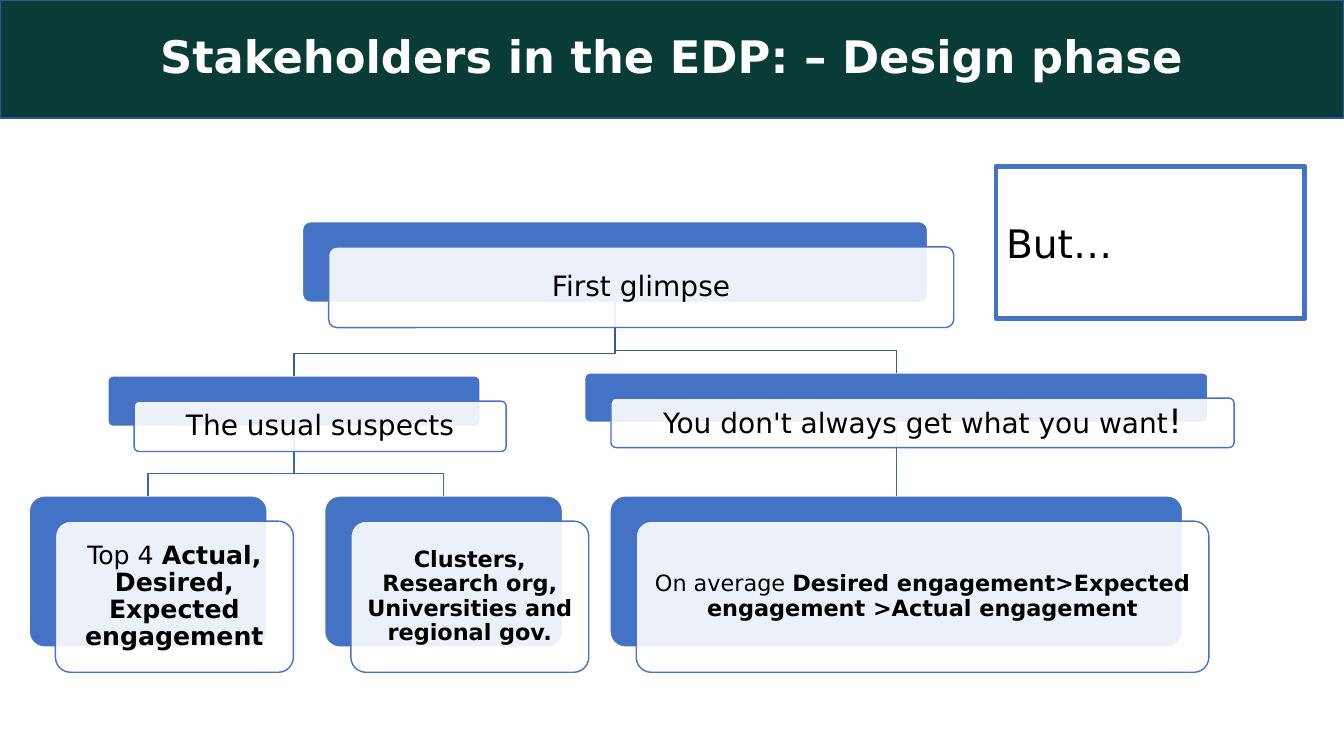
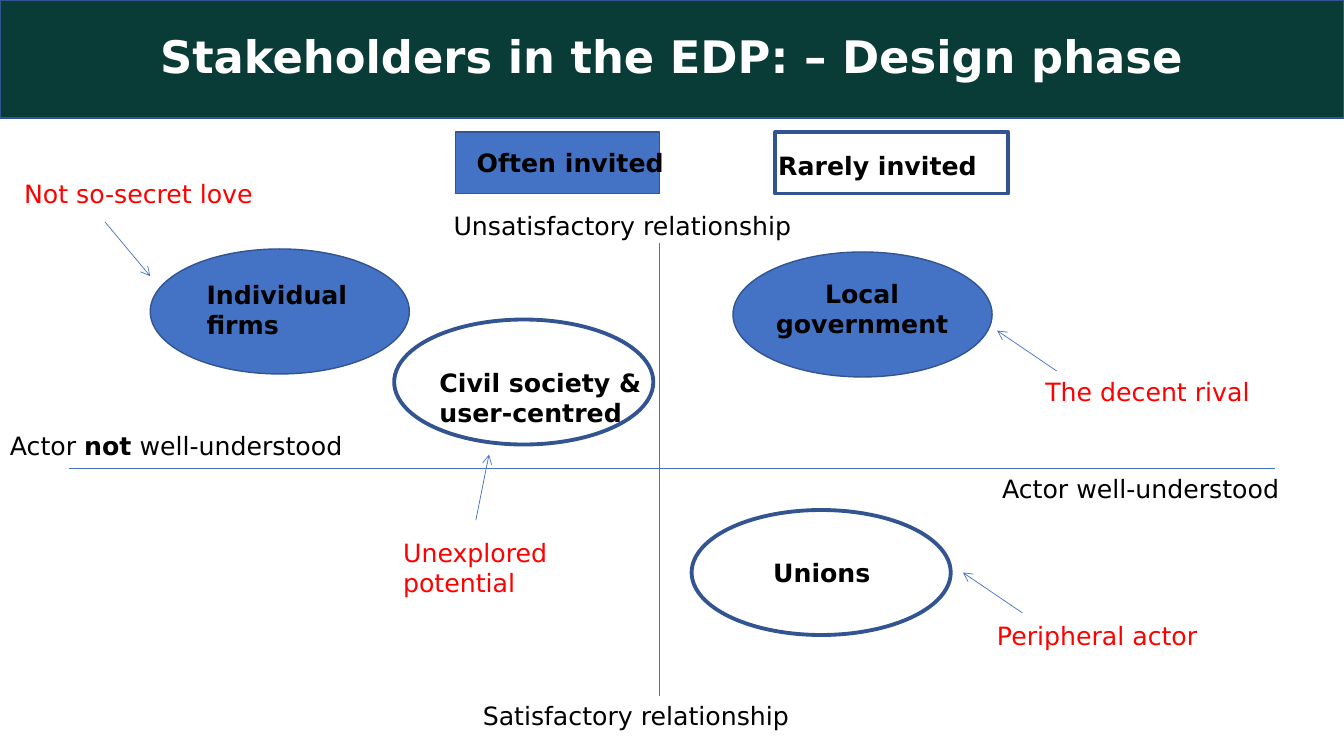
from dataclasses import dataclass
from typing import Optional, Sequence, Union

from lxml.etree import SubElement
from pptx import Presentation
from pptx.dml.color import RGBColor
from pptx.enum.shapes import MSO_CONNECTOR, MSO_SHAPE
from pptx.enum.text import MSO_ANCHOR, MSO_AUTO_SIZE, PP_ALIGN
from pptx.oxml.ns import qn
from pptx.shapes.autoshape import Shape
from pptx.shapes.connector import Connector
from pptx.slide import Slide
from pptx.text.text import TextFrame
from pptx.util import Inches, Pt

FONT = "DejaVu Sans"
GREEN, BLUE, NAVY = "093B37", "4472C4", "325491"
WHITE, BLACK, RED = "FFFFFF", "000000", "FF0000"
TITLE = "Stakeholders in the EDP: – Design phase"
SLIDE_WIDTH, SLIDE_HEIGHT = 13.33, 7.5
CARD_SHIFT_X, CARD_SHIFT_Y = 0.26, 0.25
BEND_ABOVE_CHILD = 0.22
ELLIPSE_SIZE = (2.57, 1.24)


@dataclass(frozen=True)
class Run:
    """A stretch of text with its own weight or size."""
    text: str
    bold: bool = False
    size: Optional[float] = None


Text = Union[str, Sequence[Run]]


@dataclass(frozen=True)
class Card:
    """A card of the hierarchy, hung under its parent."""
    box: tuple[float, float, float, float]
    text: Text
    size: float
    parent: Optional[int] = None
    link_color: str = "3E67B2"

    @property
    def center(self) -> float:
        """Return the horizontal middle of the back plate."""
        return self.box[0] + self.box[2] / 2


@dataclass(frozen=True)
class Actor:
    """A legend entry or an actor on the map, with its label."""
    kind: MSO_SHAPE
    box: tuple[float, float, float, float]
    often: bool
    label: str
    label_at: tuple[float, float]
    align: PP_ALIGN = PP_ALIGN.LEFT


@dataclass(frozen=True)
class AxisLabel:
    """A label at the end of an axis."""
    text: Text
    left: float
    top: float
    width: float


@dataclass(frozen=True)
class Remark:
    """A red remark with an arrow to its actor."""
    text: str
    at: tuple[float, float]
    start: tuple[float, float]
    end: tuple[float, float]


CARDS = [
    Card((3, 2.2, 6.2, 0.8), "First glimpse", 20),
    Card((1.07, 3.73, 3.69, 0.5), "The usual suspects", 20, 0, "365B9D"),
    Card((5.8, 3.7, 6.18, 0.49),
         [Run("You don't always get what you want"), Run("!", size=24)], 20, 0, "365B9D"),
    Card((0.29, 4.92, 2.36, 1.5),
         [Run("Top 4 "), Run("Actual, Desired, Expected engagement", True)], 18, 1),
    Card((3.22, 4.92, 2.36, 1.5),
         [Run("Clusters, Research org, Universities and regional gov.", True)], 16, 1),
    Card((6.05, 4.92, 5.68, 1.5),
         [Run("On average "),
          Run("Desired engagement>Expected engagement >Actual engagement", True)], 16, 2),
]

ACTORS = [
    Actor(MSO_SHAPE.RECTANGLE, (4.52, 1.31, 2.02, 0.61), True, "Often invited", (4.63, 1.41)),
    Actor(MSO_SHAPE.RECTANGLE, (7.69, 1.31, 2.31, 0.61), False, "Rarely invited", (7.62, 1.44)),
    Actor(MSO_SHAPE.OVAL, (1.49, 2.47, *ELLIPSE_SIZE), True, "Individual firms", (1.95, 2.72)),
    Actor(MSO_SHAPE.OVAL, (7.27, 2.5, *ELLIPSE_SIZE), True, "Local government", (7.44, 2.71),
          PP_ALIGN.CENTER),
    Actor(MSO_SHAPE.OVAL, (3.91, 3.17, *ELLIPSE_SIZE), False, "Civil society & user-centred",
          (4.26, 3.59)),
    Actor(MSO_SHAPE.OVAL, (6.86, 5.06, *ELLIPSE_SIZE), False, "Unions", (7.57, 5.48)),
]

AXIS_LABELS = [
    AxisLabel("Unsatisfactory relationship", 4.4, 2.04, 4.33),
    AxisLabel([Run("Actor "), Run("not", True), Run(" well-understood")], 0, 4.22, 3.56),
    AxisLabel("Actor well-understood", 9.84, 4.65, 3.3),
    AxisLabel("Satisfactory relationship", 4.69, 6.9, 4.33),
]

REMARKS = [
    Remark("The decent rival", (10.27, 3.68), (10.48, 3.68), (9.89, 3.28)),
    Remark("Unexplored potential", (3.9, 5.28), (4.72, 5.16), (4.85, 4.51)),
    Remark("Not so-secret love", (0.14, 1.72), (1.04, 2.2), (1.49, 2.74)),
    Remark("Peripheral actor", (9.79, 6.11), (10.14, 6.08), (9.55, 5.68)),
]


def rgb(color: str) -> RGBColor:
    """Turn a hex string into a colour."""
    return RGBColor.from_string(color)


def write(frame: TextFrame, text: Text, *, size: float = 18, color: str = BLACK,
          bold: bool = False, align: PP_ALIGN = PP_ALIGN.LEFT,
          anchor: MSO_ANCHOR = MSO_ANCHOR.TOP, spacing: float = 1.0,
          inset: Optional[float] = None) -> None:
    """Write one paragraph of formatted text into a frame."""
    frame.word_wrap = True
    frame.vertical_anchor = anchor
    if inset is not None:
        frame.margin_left = frame.margin_right = Inches(inset)
        frame.margin_top = frame.margin_bottom = Inches(inset)
    paragraph = frame.paragraphs[0]
    paragraph.alignment = align
    paragraph.line_spacing = spacing
    for part in [Run(text, bold)] if isinstance(text, str) else text:
        run = paragraph.add_run()
        run.text = part.text
        run.font.name = FONT
        run.font.size = Pt(part.size or size)
        run.font.bold = part.bold
        run.font.color.rgb = rgb(color)


def add_label(slide: Slide, text: Text, left: float, top: float, width: float,
              *, color: str = BLACK, bold: bool = False,
              align: PP_ALIGN = PP_ALIGN.LEFT) -> None:
    """Add a free label that grows with its text."""
    label = slide.shapes.add_textbox(Inches(left), Inches(top), Inches(width), Inches(0.4))
    label.text_frame.auto_size = MSO_AUTO_SIZE.SHAPE_TO_FIT_TEXT
    write(label.text_frame, text, color=color, bold=bold, align=align)


def add_block(slide: Slide, kind: MSO_SHAPE, box: tuple[float, float, float, float],
              *, fill: Optional[str], line: str, weight: float = 1) -> Shape:
    """Add a flat preset shape."""
    block = slide.shapes.add_shape(kind, *(Inches(length) for length in box))
    block.shadow.inherit = False
    if fill:
        block.fill.solid()
        block.fill.fore_color.rgb = rgb(fill)
    else:
        block.fill.background()
    block.line.color.rgb = rgb(line)
    block.line.width = Pt(weight)
    return block


def add_line(slide: Slide, start: tuple[float, float], end: tuple[float, float],
             *, color: str = BLUE, weight: float = 0.5, arrow: bool = False) -> Connector:
    """Add a straight line, with an arrowhead at its end if asked."""
    line = slide.shapes.add_connector(
        MSO_CONNECTOR.STRAIGHT, *(Inches(length) for length in (*start, *end)))
    line.line.color.rgb = rgb(color)
    line.line.width = Pt(weight)
    if arrow:
        SubElement(line.get_or_add_ln(), qn("a:tailEnd"), type="arrow")
    SubElement(line.element.spPr, qn("a:effectLst"))
    return line


def add_elbow(slide: Slide, points: Sequence[tuple[float, float]], color: str) -> None:
    """Add an open line through right-angled bends."""
    first, *rest = [(Inches(x), Inches(y)) for x, y in points]
    builder = slide.shapes.build_freeform(*first)
    builder.add_line_segments(rest, close=False)
    elbow = builder.convert_to_shape()
    elbow.shadow.inherit = False
    elbow.fill.background()
    elbow.line.color.rgb = rgb(color)
    elbow.line.width = Pt(1)


def link_cards(slide: Slide, child: Card, plates: Sequence[Shape], plate: Shape) -> None:
    """Link a card to its parent, straight when they are aligned."""
    parent = CARDS[child.parent]
    start = (parent.center, parent.box[1] + parent.box[3])
    end = (child.center, child.box[1])
    if abs(start[0] - end[0]) < 0.01:
        link = add_line(slide, start, end, color=child.link_color, weight=1)
        link.begin_connect(plates[child.parent], 2)
        link.end_connect(plate, 0)
    else:
        bend = end[1] - BEND_ABOVE_CHILD
        add_elbow(slide, [start, (start[0], bend), (end[0], bend), end], child.link_color)


def add_card_front(slide: Slide, card: Card) -> None:
    """Lay the translucent text plate over a card's back plate."""
    left, top, width, height = card.box
    front = add_block(slide, MSO_SHAPE.ROUNDED_RECTANGLE,
                      (left + CARD_SHIFT_X, top + CARD_SHIFT_Y, width, height),
                      fill=WHITE, line=BLUE)
    front.adjustments[0] = 0.1
    color = front.element.spPr.find(qn("a:solidFill"))[0]
    SubElement(color, qn("a:alpha"), val="90000")
    write(front.text_frame, card.text, size=card.size, align=PP_ALIGN.CENTER,
          anchor=MSO_ANCHOR.MIDDLE, spacing=0.9, inset=0.08 if card.size == 20 else 0.07)


def add_titled_slide(deck: Presentation) -> Slide:
    """Add a blank slide with the title band."""
    slide = deck.slides.add_slide(deck.slide_layouts[6])
    band = add_block(slide, MSO_SHAPE.RECTANGLE, (0, 0, SLIDE_WIDTH, 1.17),
                     fill=GREEN, line=NAVY)
    write(band.text_frame, TITLE, size=32, color=WHITE, bold=True,
          align=PP_ALIGN.CENTER, anchor=MSO_ANCHOR.MIDDLE, spacing=0.9)
    return slide


def build_hierarchy(deck: Presentation) -> None:
    """Build the slide with the card hierarchy."""
    slide = add_titled_slide(deck)
    plates = [add_block(slide, MSO_SHAPE.ROUNDED_RECTANGLE, card.box, fill=BLUE, line=WHITE)
              for card in CARDS]
    for card, plate in zip(CARDS, plates):
        plate.adjustments[0] = 0.1
        if card.parent is not None:
            link_cards(slide, card, plates, plate)
    for card in CARDS:
        add_card_front(slide, card)
    objection = add_block(slide, MSO_SHAPE.RECTANGLE, (9.88, 1.65, 3.06, 1.51),
                          fill=WHITE, line=BLUE, weight=3.25)
    write(objection.text_frame, "But…", size=28, anchor=MSO_ANCHOR.MIDDLE)


def build_actor_map(deck: Presentation) -> None:
    """Build the slide that maps the actors on two axes."""
    slide = add_titled_slide(deck)
    add_line(slide, (0.68, 4.65), (12.65, 4.65))
    add_line(slide, (6.54, 2.41), (6.54, 6.9))
    for axis in AXIS_LABELS:
        add_label(slide, axis.text, axis.left, axis.top, axis.width)
    for actor in ACTORS:
        add_block(slide, actor.kind, actor.box, fill=BLUE if actor.often else None,
                  line=NAVY, weight=1 if actor.often else 2.75)
        add_label(slide, actor.label, *actor.label_at, 2.22, bold=True, align=actor.align)
    for remark in REMARKS:
        add_label(slide, remark.text, *remark.at, 2.7, color=RED)
        add_line(slide, remark.start, remark.end, arrow=True)


def main() -> None:
    """Build and save the presentation."""
    deck = Presentation()
    deck.slide_width, deck.slide_height = Inches(SLIDE_WIDTH), Inches(SLIDE_HEIGHT)
    build_hierarchy(deck)
    build_actor_map(deck)
    deck.save("out.pptx")


if __name__ == "__main__":
    main()
